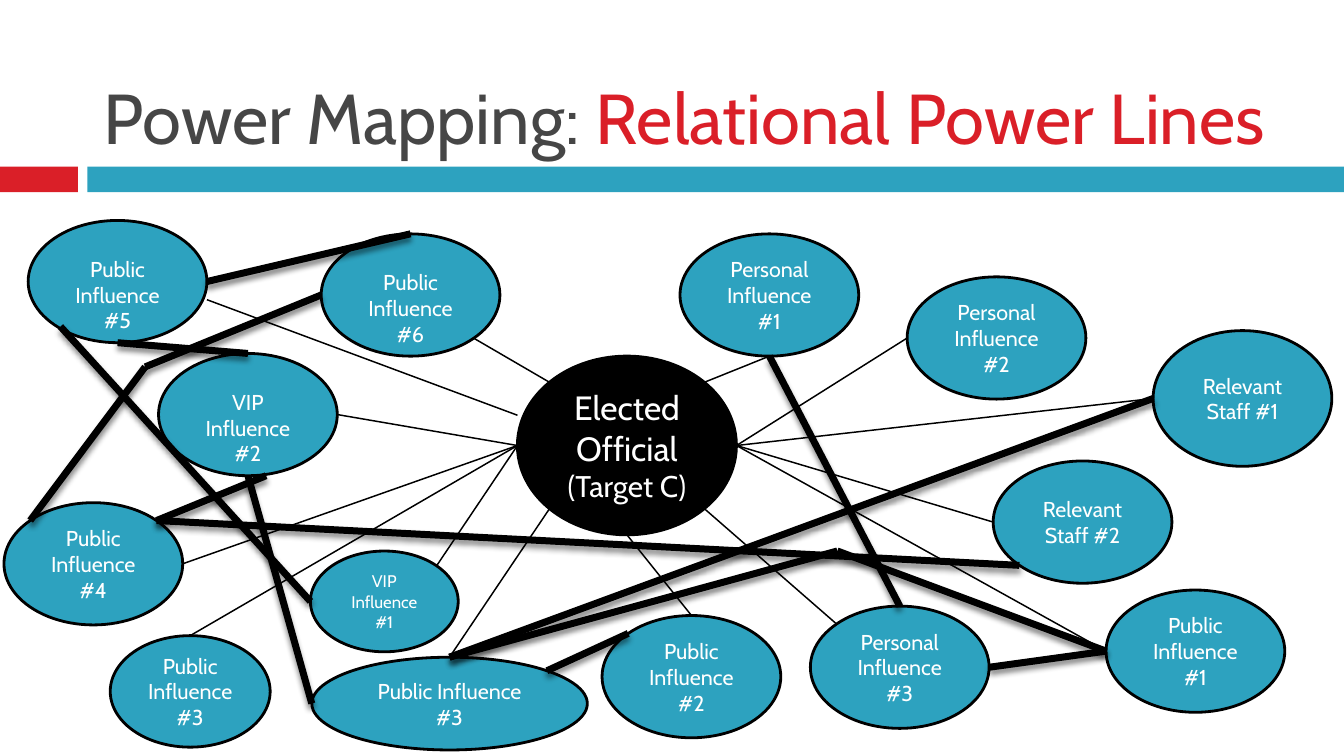
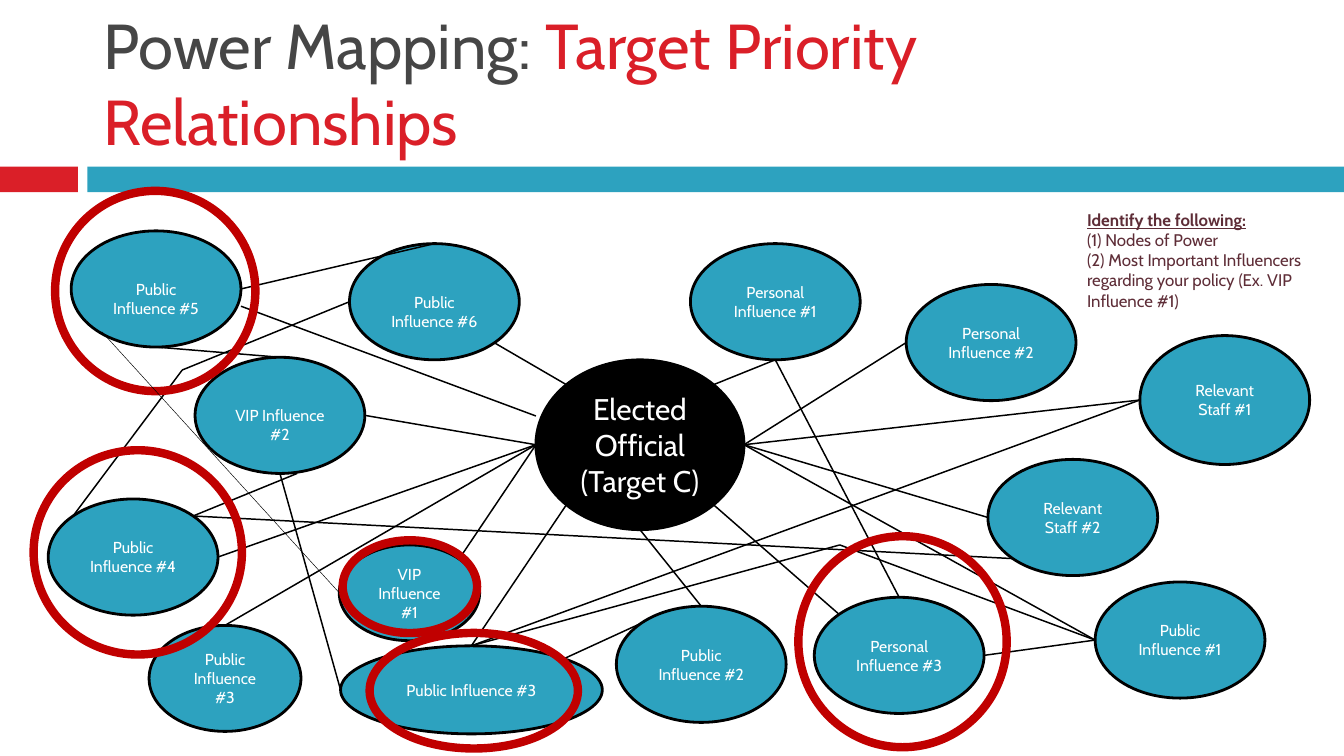
import pptx
import pptx.dml.color
import pptx.enum.shapes
import pptx.enum.text
import pptx.oxml
import pptx.oxml.ns
import pptx.util

Inches = pptx.util.Inches
Pt = pptx.util.Pt
Kind = pptx.enum.shapes.MSO_SHAPE
Align = pptx.enum.text.PP_ALIGN
Anchor = pptx.enum.text.MSO_ANCHOR

FONT = "Cabin"
RED, TEAL, GREY = "DA1F28", "2DA2BF", "464646"
BLACK, WHITE, RING, WINE = "000000", "FFFFFF", "C00000", "5E2D37"
THIN, THICK, HAIR = 0.79, 3.75, 0.25
WIDE = 10
HIGH = WIDE * 9 / 16
OVAL = (1.33, 0.91)

HUB = (3.85, 2.65, 1.63, 1.33)
NODES = {
    "per1": ("Personal Influence #1", (5.06, 1.74, *OVAL)),
    "pub6": ("Public Influence #6", (2.39, 1.74, *OVAL)),
    "vip2": ("VIP Influence #2", (1.18, 2.63, *OVAL)),
    "pub4": ("Public Influence #4", (0.03, 3.74, *OVAL)),
    "pub5": ("Public Influence #5", (0.21, 1.64, *OVAL)),
    "staff2": ("Relevant Staff #2", (7.39, 3.43, *OVAL)),
    "staff1": ("Relevant Staff #1", (8.58, 2.46, 1.33, 1.01)),
    "per2": ("Personal Influence #2", (6.75, 2.06, *OVAL)),
    "pub2": ("Public Influence #2", (4.48, 4.58, *OVAL)),
    "pub1": ("Public Influence #1", (8.23, 4.39, *OVAL)),
    "wide": ("Public Influence #3", (2.32, 4.89, 2.05, 0.69)),
    "pub3": ("Public Influence #3", (0.82, 4.73, 1.19, 0.83)),
    "per3": ("Personal Influence #3", (6.03, 4.51, *OVAL)),
    "vip1": ("VIP Influence #1", (2.31, 4.1, 1.1, 0.75)),
}
LOW = {"pub5", "pub6", "vip2"}  # labels set half a line below centre

# Ends are "node side", or a free point where a line bends or stops
BEND_L, BEND_R = (1.08, 2.73), (6.23, 4.1)
SPOKES = [
    ("hub nw", "pub6 se"), ("hub sw", "wide n"), ("hub ne", "per1 s"),
    ("hub se", "per3 nw"), ("hub e", "pub1 w"), ("hub e", "per2 w"),
    ("hub e", "staff1 w"), ("hub e", "staff2 w"), ("hub w", "vip2 e"),
    ("hub w", "vip1 ne"), ("hub s", "pub2 n"), ((1.54, 2.23), (3.85, 3.09)),
    ("pub4 e", "hub w"), ("pub3 n", "hub w"),
]
TIES = [
    ("staff2 sw", "pub4 ne"), ("pub4 ne", (1.98, 3.54)), ("pub4 nw", BEND_L),
    (BEND_L, "pub6 w"), ("wide w", "vip2 s"), ("wide n", "staff1 w"),
    ("wide n", BEND_R), (BEND_R, "pub1 w"), ("wide ne", "pub2 nw"),
    ("per1 s", "per3 n"), ("per3 e", "pub1 w"), ("pub5 s", "vip2 n"),
    ("pub5 e", "pub6 n"),
]
LAST = ((0.45, 2.43), "vip1 w")
RINGS = [
    (0.41, 1.42, 1.49, 1.49), (0.25, 3.35, 1.55, 1.52), (2.55, 4.02, 1, 0.69),
    (2.75, 4.71, 1.55, 0.86), (5.94, 3.99, 1.55, 1.57),
]


def paint(hue):
    return pptx.dml.color.RGBColor.from_string(hue)


def write(shape, paras, size=12, hue=WHITE, align=Align.LEFT, anchor=Anchor.TOP):
    """Fill a shape with paragraphs, each a list of (text, overrides) runs."""
    frame = shape.text_frame
    frame.word_wrap = True
    frame.vertical_anchor = anchor
    for i, runs in enumerate(paras):
        para = frame.paragraphs[0] if i == 0 else frame.add_paragraph()
        para.alignment = align
        for words, own in runs:
            run = para.add_run()
            run.text = words
            font = run.font
            font.name = FONT
            font.size = Pt(own.get("size", size))
            font.color.rgb = paint(own.get("hue", hue))
            font.bold = own.get("bold", False)
            font.underline = own.get("under", False)


def draw(slide, kind, box, fill=None, edge=None, width=1.5):
    shape = slide.shapes.add_shape(kind, *map(Inches, box))
    shape.shadow.inherit = False
    if fill:
        shape.fill.solid()
        shape.fill.fore_color.rgb = paint(fill)
    else:
        shape.fill.background()
    if edge:
        shape.line.color.rgb = paint(edge)
        shape.line.width = Pt(width)
    else:
        shape.line.fill.background()
    return shape


def label(slide, box, paras, size, fill=TEAL, low=False):
    """Draw an outlined ellipse with centred text."""
    shape = draw(slide, Kind.OVAL, box, fill, BLACK)
    write(shape, paras, size=size, align=Align.CENTER, anchor=Anchor.MIDDLE)
    frame = shape.text_frame
    frame.margin_top = Pt(1.2 * size) if low else 0
    frame.margin_bottom = 0


def link(slide, start, end, width, shade=False):
    ends = map(Inches, (*start, *end))
    line = slide.shapes.add_connector(pptx.enum.shapes.MSO_CONNECTOR.STRAIGHT, *ends)
    line.line.color.rgb = paint(BLACK)
    line.line.width = Pt(width)
    glow = (
        f'<a:outerShdw blurRad="{Pt(3)}" dist="{Pt(2.4)}" dir="5400000" rotWithShape="0">'
        f'<a:srgbClr val="{BLACK}"><a:alpha val="45000"/></a:srgbClr></a:outerShdw>'
    ) if shade else ""
    space = pptx.oxml.ns.nsdecls("a")
    line._element.spPr.append(
        pptx.oxml.parse_xml(f"<a:effectLst {space}>{glow}</a:effectLst>"))


def spot(end):
    """Return the point on the map for a line's end."""
    if not isinstance(end, str):
        return end
    name, side = end.split()
    x, y, w, h = HUB if name == "hub" else NODES[name][1]
    reach = 0.5 if len(side) == 1 else 0.5 ** 1.5
    across = ("e" in side) - ("w" in side)
    down = ("s" in side) - ("n" in side)
    return x + w * (0.5 + across * reach), y + h * (0.5 + down * reach)


def base(deck, topic, size):
    """Add a slide with the bands and the two-colour title."""
    slide = deck.slides.add_slide(deck.slide_layouts[6])
    draw(slide, Kind.RECTANGLE, (0, 1.24, 0.58, 0.19), RED)
    draw(slide, Kind.RECTANGLE, (0.65, 1.24, 9.35, 0.19), TEAL)
    title = slide.shapes.add_textbox(*map(Inches, (0.67, 0.13, 8.92, 1.1)))
    write(title, [[("Power Mapping: ", {}), (topic, {"hue": RED})]],
          size=size, hue=GREY, anchor=Anchor.BOTTOM)
    return slide


def plot(slide, sizes, scale=1, shift=(0, 0), tie=THIN, last=THIN, rings=()):
    """Draw the power map; sizes are for hub, target, nodes and VIP #1."""
    def move(point):
        return tuple(scale * p + s for p, s in zip(point, shift))

    def fit(box):
        return (*move(box[:2]), scale * box[2], scale * box[3])

    def join(pair, width):
        start, end = (move(spot(p)) for p in pair)
        link(slide, start, end, width, shade=width == THICK)

    hub, target, node, vip = sizes
    label(slide, fit(HUB), [[("Elected Official", {})],
                            [("(Target C)", {"size": target})]], hub, BLACK)
    for name, (words, box) in NODES.items():
        size = vip if name == "vip1" else node
        label(slide, fit(box), [[(words, {})]], size, low=name in LOW)
    for pair in SPOKES:
        join(pair, THIN)
    for pair in TIES:
        join(pair, tie)
    for box in rings:
        draw(slide, Kind.OVAL, box, edge=RING, width=4.5)
    join(LAST, last)


def note(slide):
    box = slide.shapes.add_textbox(*map(Inches, (7.99, 1.51, 2, 0.86)))
    write(box, [
        [("Identify the following:", {"bold": True, "under": True})],
        [("(1) Nodes of Power", {})],
        [("(2) Most Important Influencers regarding your policy "
          "(Ex. VIP Influence #1)", {})],
    ], size=9, hue=WINE)


def main():
    deck = pptx.Presentation()
    deck.slide_width, deck.slide_height = Inches(WIDE), Inches(HIGH)

    lines = base(deck, "Relational Power Lines", 37.8)
    plot(lines, (18, 16, 11.5, 9), tie=THICK, last=THICK)

    goals = base(deck, "Target Priority Relationships", 34)
    plot(goals, (16, 16, 8.5, 8.5), scale=0.95, shift=(0.33, 0.16),
         last=HAIR, rings=RINGS)
    note(goals)

    deck.save("out.pptx")


if __name__ == "__main__":
    main()
